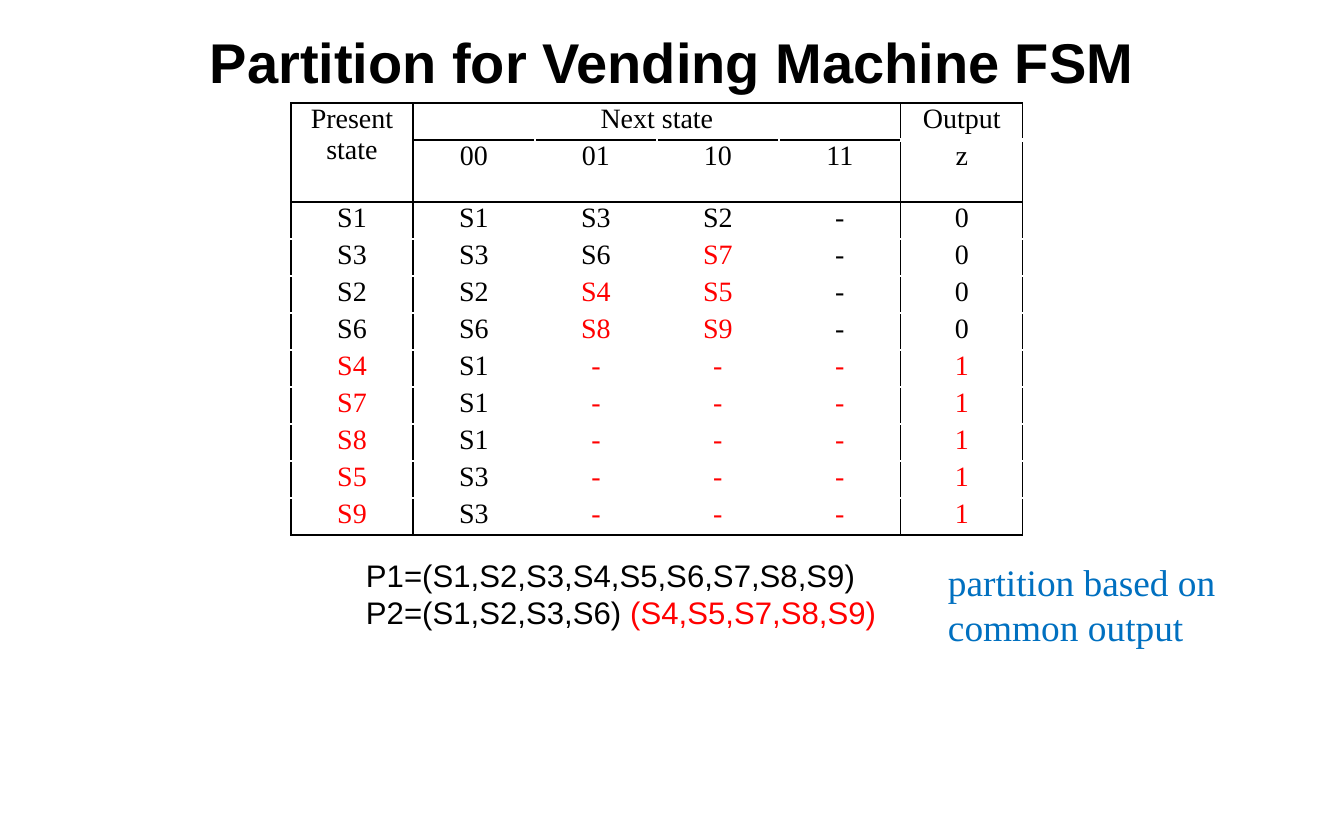
from dataclasses import dataclass

from lxml import etree
from pptx import Presentation
from pptx.dml.color import RGBColor
from pptx.enum.text import MSO_ANCHOR, MSO_AUTO_SIZE, PP_ALIGN
from pptx.oxml.ns import qn
from pptx.util import Emu, Pt

PIXELS_PER_INCH = 112
BLACK = RGBColor(0x00, 0x00, 0x00)
WHITE = RGBColor(0xFF, 0xFF, 0xFF)
RED = RGBColor(0xFF, 0x00, 0x00)
BLUE = RGBColor(0x00, 0x70, 0xC0)
SANS, SERIF = "Arial", "Times New Roman"
LEFT, CENTER = PP_ALIGN.LEFT, PP_ALIGN.CENTER
TOP, MIDDLE = MSO_ANCHOR.TOP, MSO_ANCHOR.MIDDLE
FIT_SHAPE, NO_FIT = MSO_AUTO_SIZE.SHAPE_TO_FIT_TEXT, MSO_AUTO_SIZE.NONE

COLUMN_WIDTH, ROW_HEIGHT = 122, 37
HEADER_ROWS, OUTPUT_COLUMN = 2, 5
RULED_COLUMN_EDGES = {0, 1, 5, 6}
RULED_ROW_EDGES = {0, 2, 11}
STATE_ROWS = [
    ["Present state", "Next state", "", "", "", "Output"],
    ["", "00", "01", "10", "11", "z"],
    ["S1", "S1", "S3", "S2", "-", "0"],
    ["S3", "S3", "S6", "S7", "-", "0"],
    ["S2", "S2", "S4", "S5", "-", "0"],
    ["S6", "S6", "S8", "S9", "-", "0"],
    ["S4", "S1", "-", "-", "-", "1"],
    ["S7", "S1", "-", "-", "-", "1"],
    ["S8", "S1", "-", "-", "-", "1"],
    ["S5", "S3", "-", "-", "-", "1"],
    ["S9", "S3", "-", "-", "-", "1"],
]
OUTPUT_ONE_STATES = {"S4", "S5", "S7", "S8", "S9"}


@dataclass(frozen=True)
class Span:
    text: str
    color: RGBColor = BLACK


@dataclass(frozen=True)
class TextBlock:
    left: int
    top: int
    width: int
    height: int
    lines: list[list[Span]]
    font: str
    size: int
    bold: bool = False
    align: PP_ALIGN = LEFT
    anchor: MSO_ANCHOR = TOP
    wrap: bool = False
    fit: MSO_AUTO_SIZE = FIT_SHAPE


TEXT_BLOCKS = [
    TextBlock(355, 551, 536, 86, [
        [Span("P1=(S1,S2,S3,S4,S5,S6,S7,S8,S9)")],
        [Span("P2=(S1,S2,S3,S6) "), Span("(S4,S5,S7,S8,S9)", RED)],
    ], SANS, 20),
    TextBlock(112, 19, 1120, 84, [[Span("Partition for Vending Machine FSM")]],
              SANS, 36, bold=True, align=CENTER, anchor=MIDDLE, wrap=True, fit=NO_FIT),
    TextBlock(937, 554, 301, 102, [
        [Span("partition based on", BLUE)],
        [Span("common output", BLUE)],
    ], SERIF, 24),
]


def px(length: int) -> Emu:
    return Emu(round(length * 914400 / PIXELS_PER_INCH))


def set_all(target, values: dict) -> None:
    for name, value in values.items():
        setattr(target, name, value)


def add_span(para, span: Span, font: str, size: int, bold: bool = False) -> None:
    run = para.add_run()
    run.text = span.text
    set_all(run.font, {"name": font, "size": Pt(size), "bold": bold})
    run.font.color.rgb = span.color


def add_text_block(page, block: TextBlock) -> None:
    box = page.shapes.add_textbox(px(block.left), px(block.top), px(block.width), px(block.height))
    frame = box.text_frame
    set_all(frame, {"word_wrap": block.wrap, "auto_size": block.fit,
                    "vertical_anchor": block.anchor})
    for index, line in enumerate(block.lines):
        para = frame.add_paragraph() if index else frame.paragraphs[0]
        para.alignment = block.align
        for span in line:
            add_span(para, span, block.font, block.size, block.bold)


def add_border(cell, tag: str, color: RGBColor, points: int) -> None:
    line = etree.SubElement(cell._tc.get_or_add_tcPr(), qn(tag), w=str(Pt(points)))
    fill = etree.SubElement(line, qn("a:solidFill"))
    etree.SubElement(fill, qn("a:srgbClr"), val=str(color))


def rule_cell(cell, row: int, column: int) -> None:
    """Black lines on ruled edges, white lines on all others."""
    below, right = row + cell.span_height, column + cell.span_width

    def row_color(edge: int) -> RGBColor:
        under_next_state = edge == 1 and column < OUTPUT_COLUMN
        return BLACK if edge in RULED_ROW_EDGES or under_next_state else WHITE

    def column_color(edge: int) -> RGBColor:
        return BLACK if edge in RULED_COLUMN_EDGES else WHITE

    bottom_width = 3 if (row, column) == (0, OUTPUT_COLUMN) else 1
    add_border(cell, "a:lnL", column_color(column), 1)
    add_border(cell, "a:lnR", column_color(right), 1)
    add_border(cell, "a:lnT", row_color(row), 1)
    add_border(cell, "a:lnB", row_color(below), bottom_width)


def state_color(row: int, column: int) -> RGBColor:
    """Red marks the states with output 1 and the rest of their rows."""
    if row < HEADER_ROWS:
        return BLACK
    values = STATE_ROWS[row]
    in_red_row = values[0] in OUTPUT_ONE_STATES and column != 1
    return RED if in_red_row or values[column] in OUTPUT_ONE_STATES else BLACK


def add_state_table(page, left: int, top: int) -> None:
    row_count, column_count = len(STATE_ROWS), len(STATE_ROWS[0])
    frame = page.shapes.add_table(row_count, column_count, px(left), px(top),
                                  px(column_count * COLUMN_WIDTH), px(row_count * ROW_HEIGHT))
    table = frame.table
    set_all(table, {"first_row": False, "horz_banding": False})
    for column in table.columns:
        column.width = px(COLUMN_WIDTH)
    for row in table.rows:
        row.height = px(ROW_HEIGHT)
    table.cell(0, 0).merge(table.cell(1, 0))
    table.cell(0, 1).merge(table.cell(0, 4))

    for row, values in enumerate(STATE_ROWS):
        for column, text in enumerate(values):
            cell = table.cell(row, column)
            set_all(cell, {"margin_left": 0, "margin_right": 0,
                           "margin_top": 0, "margin_bottom": 0})
            if not cell.is_spanned:
                rule_cell(cell, row, column)
                para = cell.text_frame.paragraphs[0]
                para.alignment = CENTER
                add_span(para, Span(text, state_color(row, column)), SERIF, 18)
            cell.fill.background()


def main() -> None:
    deck = Presentation()
    set_all(deck, {"slide_width": px(1344), "slide_height": px(840)})
    page = deck.slides.add_slide(deck.slide_layouts[6])
    add_state_table(page, 291, 103)
    for block in TEXT_BLOCKS:
        add_text_block(page, block)
    deck.save("out.pptx")


if __name__ == "__main__":
    main()
